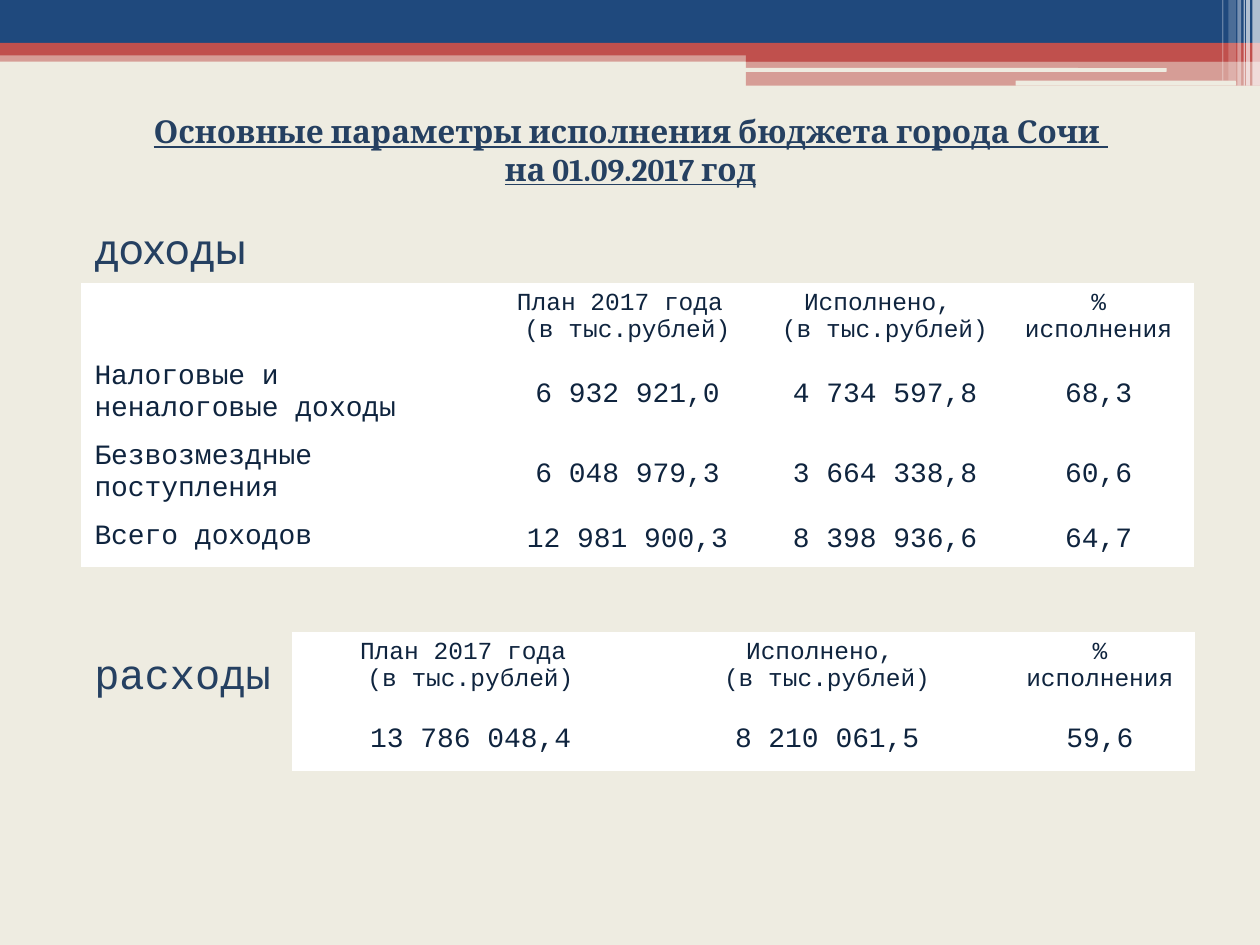
from lxml import etree
from pptx import Presentation
from pptx.dml.color import RGBColor
from pptx.enum.shapes import MSO_SHAPE as SHAPE
from pptx.enum.text import MSO_ANCHOR as ANCHOR, MSO_AUTO_SIZE as AUTO, PP_ALIGN as ALIGN
from pptx.oxml.ns import qn
from pptx.util import Inches, Pt

CREAM = RGBColor(0xEE, 0xEC, 0xE1)
NAVY = RGBColor(0x1F, 0x49, 0x7D)
RED = RGBColor(0xC0, 0x50, 0x4D)
WHITE = RGBColor(0xFF, 0xFF, 0xFF)
HEADING = RGBColor(0x25, 0x40, 0x61)
INK = RGBColor(0x0F, 0x24, 0x3E)
MONO = "Courier New"

BANDS = [
    (SHAPE.RECTANGLE, 0, 0.4, 10, 0.09, RED, 50),
    (SHAPE.RECTANGLE, 0, 0, 10, 0.34, NAVY, 100),
    (SHAPE.RECTANGLE, 0, 0.34, 10, 0.1, RED, 100),
    (SHAPE.RECTANGLE, 5.92, 0.39, 4.08, 0.1, RED, 100),
    (SHAPE.RECTANGLE, 5.92, 0.48, 4.08, 0.2, RED, 50),
    (SHAPE.ROUNDED_RECTANGLE, 5.91, 0.54, 3.35, 0.03, CREAM, 100),
    (SHAPE.ROUNDED_RECTANGLE, 8.06, 0.64, 1.75, 0.04, CREAM, 100),
]
STRIPES = [
    (9.94, 0.06, 0.68, 65),
    (9.89, 0.03, 0.68, 65),
    (9.87, 0.01, 0.68, 60),
    (9.82, 0.03, 0.68, 40),
    (9.75, 0.06, 0.64, 20),
    (9.7, 0.01, 0.64, 30),
]
HEADERS = ["План 2017 года \n(в тыс.рублей)", "Исполнено, \n(в тыс.рублей)", "% исполнения"]
INCOME = [
    ["", *HEADERS],
    ["Налоговые и неналоговые доходы", "6 932 921,0", "4 734 597,8", "68,3"],
    ["Безвозмездные поступления", "6 048 979,3", "3 664 338,8", "60,6"],
    ["Всего доходов", "12 981 900,3", "8 398 936,6", "64,7"],
]
EXPENSES = [HEADERS, ["13 786 048,4", "8 210 061,5", "59,6"]]


def write_text(tf, text, size, color, font=MONO, align=ALIGN.LEFT, bold=False, underline=False):
    for i, line in enumerate(text.split("\n")):
        p = tf.paragraphs[0] if i == 0 else tf.add_paragraph()
        p.alignment = align
        r = p.add_run()
        r.text = line
        r.font.size = Pt(size)
        r.font.name = font
        r.font.bold = bold
        r.font.underline = underline
        r.font.color.rgb = color


def add_band(s, kind, x, y, w, h, color, opacity):
    sp = s.shapes.add_shape(kind, Inches(x), Inches(y), Inches(w), Inches(h))
    sp.shadow.inherit = False
    sp.line.fill.background()
    sp.fill.solid()
    sp.fill.fore_color.rgb = color
    if opacity < 100:
        clr = sp.fill._xPr.find(".//" + qn("a:srgbClr"))
        etree.SubElement(clr, qn("a:alpha"), val=str(opacity * 1000))


def add_title(s, text):
    sp = s.shapes.title
    sp.left, sp.top, sp.width, sp.height = Inches(0.24), Inches(0.84), Inches(9.53), Inches(0.71)
    tf = sp.text_frame
    tf.vertical_anchor = ANCHOR.TOP
    tf.auto_size = AUTO.SHAPE_TO_FIT_TEXT
    write_text(tf, text, 18, HEADING, "Cambria", ALIGN.CENTER, bold=True, underline=True)


def add_label(s, text, y, font):
    sp = s.shapes.add_textbox(Inches(0.65), Inches(y), Inches(2.2), Inches(0.5))
    tf = sp.text_frame
    tf.word_wrap = True
    tf.auto_size = AUTO.SHAPE_TO_FIT_TEXT
    write_text(tf, text, 24, HEADING, font)


def set_borders(cell, bottom):
    tc_pr = cell._tc.get_or_add_tcPr()
    for i, (side, width) in enumerate([("L", 1), ("R", 1), ("T", 1), ("B", bottom)]):
        ln = etree.Element(qn("a:ln" + side), w=str(Pt(width)))
        fill = etree.SubElement(ln, qn("a:solidFill"))
        etree.SubElement(fill, qn("a:srgbClr"), val=str(WHITE))
        tc_pr.insert(i, ln)


def add_table(s, rows, x, y, widths, heights):
    table = s.shapes.add_table(len(rows), len(widths), Inches(x), Inches(y),
                               Inches(sum(widths)), Inches(sum(heights))).table
    for col, width in zip(table.columns, widths):
        col.width = Inches(width)
    for i, (values, height) in enumerate(zip(rows, heights)):
        table.rows[i].height = Inches(height)
        for j, value in enumerate(values):
            cell = table.cell(i, j)
            cell.fill.solid()
            cell.fill.fore_color.rgb = WHITE
            set_borders(cell, 3 if i == 0 else 1)
            row_label = len(values) == 4 and j == 0
            if i and not row_label:
                cell.vertical_anchor = ANCHOR.MIDDLE
            if value:
                write_text(cell.text_frame, value, 16 if i else 14, INK,
                           align=ALIGN.LEFT if row_label else ALIGN.CENTER)


def main():
    prs = Presentation()
    prs.slide_width, prs.slide_height = Inches(10), Inches(7.5)
    s = prs.slides.add_slide(prs.slide_layouts[5])
    s.background.fill.solid()
    s.background.fill.fore_color.rgb = CREAM
    for band in BANDS:
        add_band(s, *band)
    for x, w, h, opacity in STRIPES:
        add_band(s, SHAPE.RECTANGLE, x, 0, w, h, WHITE, opacity)
    add_title(s, "Основные параметры исполнения бюджета города Сочи \nна 01.09.2017 год")
    add_table(s, INCOME, 0.65, 2.25, [3.23, 2.2, 1.89, 1.5], [0.41] * 4)
    add_label(s, "доходы", 1.72, "Cabin")
    add_label(s, "расходы", 5.09, MONO)
    add_table(s, EXPENSES, 2.32, 5.02, [2.83, 2.83, 1.5], [0.62, 0.47])
    prs.save("out.pptx")


if __name__ == "__main__":
    main()
